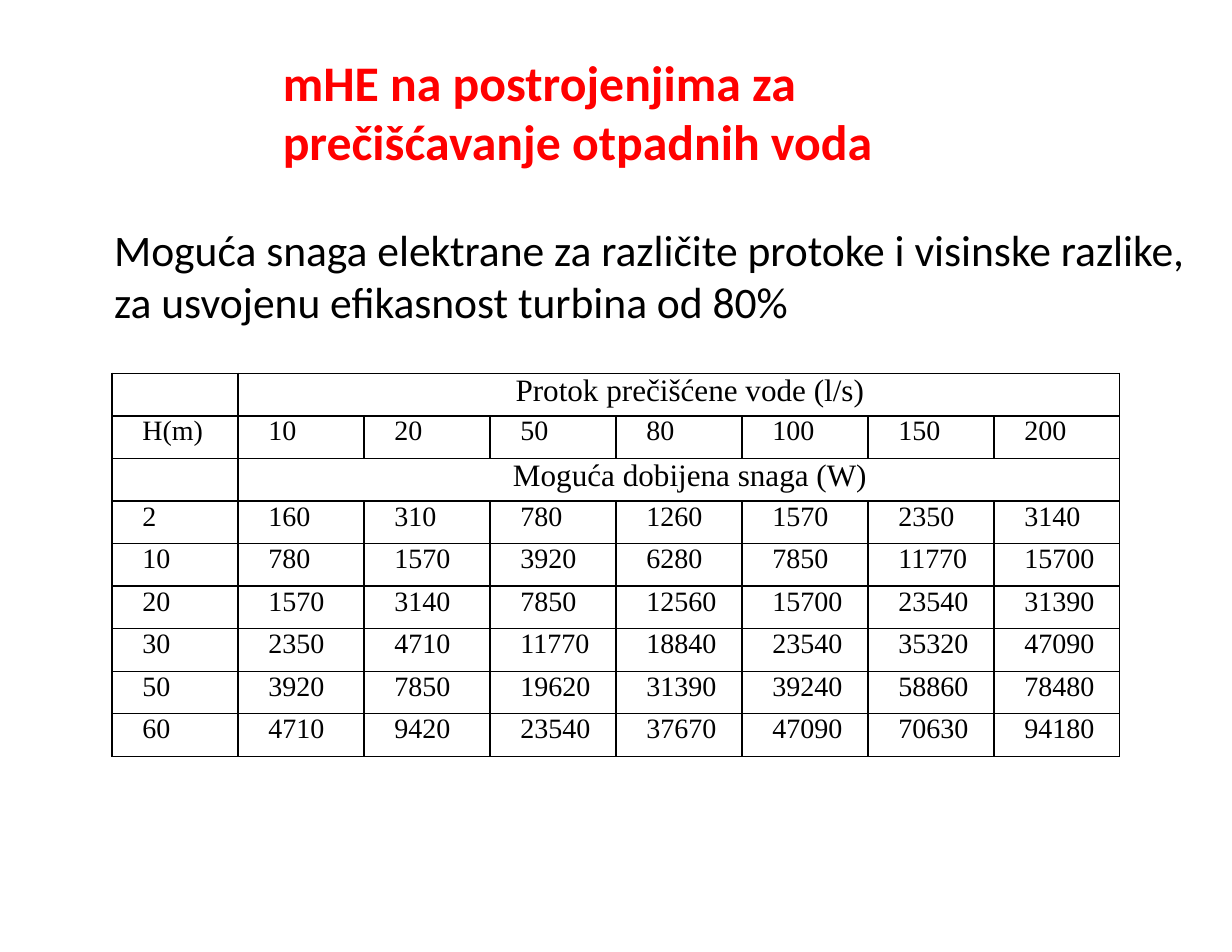
import pptx
import pptx.dml.color
import pptx.enum.text
import pptx.oxml
import pptx.oxml.ns
import pptx.util

Pt = pptx.util.Pt
ALIGN = pptx.enum.text.PP_ALIGN
COLORS = {"title": "FF0000", "text": "000000", "border": "000000"}

TITLE = "mHE na postrojenjima za prečišćavanje otpadnih voda"
SUBTITLE = ("Moguća snaga elektrane za različite protoke i visinske razlike, "
            "za usvojenu efikasnost turbina od 80%")

# A row with two entries has its second one merged across the flow columns
ROWS = [
    ["", "Protok prečišćene vode (l/s)"],
    ["H(m)", 10, 20, 50, 80, 100, 150, 200],
    ["", "Moguća dobijena snaga (W)"],
    [2, 160, 310, 780, 1260, 1570, 2350, 3140],
    [10, 780, 1570, 3920, 6280, 7850, 11770, 15700],
    [20, 1570, 3140, 7850, 12560, 15700, 23540, 31390],
    [30, 2350, 4710, 11770, 18840, 23540, 35320, 47090],
    [50, 3920, 7850, 19620, 31390, 39240, 58860, 78480],
    [60, 4710, 9420, 23540, 37670, 47090, 70630, 94180],
]
COLUMN_COUNT = 8
COLUMN_WIDTH = 81
ROW_HEIGHT = 27.36


def format_font(paragraph, name, size, color, bold=False):
    font = paragraph.font
    font.name = name
    font.size = Pt(size)
    font.bold = bold
    font.color.rgb = pptx.dml.color.RGBColor.from_string(COLORS[color])


def indent(paragraph, left, first_line):
    properties = paragraph._p.get_or_add_pPr()
    properties.set("marL", str(Pt(left)))
    properties.set("indent", str(Pt(first_line)))


def add_title(slide):
    title = slide.shapes.title
    title.left, title.top, title.width, title.height = (
        Pt(124), Pt(18), Pt(546.5), Pt(93))
    frame = title.text_frame
    frame.text = TITLE
    frame.word_wrap = True
    frame.auto_size = pptx.enum.text.MSO_AUTO_SIZE.SHAPE_TO_FIT_TEXT
    frame.vertical_anchor = pptx.enum.text.MSO_ANCHOR.TOP
    frame.margin_left = frame.margin_right = frame.margin_bottom = 0
    frame.margin_top = Pt(15)
    paragraph = frame.paragraphs[0]
    paragraph.alignment = ALIGN.LEFT
    indent(paragraph, 57.8, 0)
    format_font(paragraph, "Calibri", 32, "title", bold=True)


def add_subtitle(slide):
    box = slide.shapes.add_textbox(Pt(66.3), Pt(139.7), Pt(702), Pt(75))
    frame = box.text_frame
    frame.word_wrap = True
    frame.auto_size = pptx.enum.text.MSO_AUTO_SIZE.SHAPE_TO_FIT_TEXT
    frame.text = SUBTITLE
    format_font(frame.paragraphs[0], "Calibri", 28, "text")


def add_borders(cell):
    properties = cell._tc.get_or_add_tcPr()
    for position, side in enumerate(("lnL", "lnR", "lnT", "lnB")):
        line = pptx.oxml.parse_xml(
            f'<a:{side} {pptx.oxml.ns.nsdecls("a")} w="{Pt(1)}"><a:solidFill>'
            f'<a:srgbClr val="{COLORS["border"]}"/></a:solidFill></a:{side}>')
        properties.insert(position, line)


def format_cell(cell, value, heading):
    cell.fill.background()
    add_borders(cell)
    cell.margin_left = cell.margin_right = Pt(5.4)
    cell.margin_top = cell.margin_bottom = 0
    cell.text = str(value)
    paragraph = cell.text_frame.paragraphs[0]
    paragraph.alignment = ALIGN.CENTER if heading else ALIGN.JUSTIFY
    indent(paragraph, 0, 14.2)
    format_font(paragraph, "Times New Roman", 20 if heading else 18, "text")


def add_power_table(slide):
    table = slide.shapes.add_table(
        len(ROWS), COLUMN_COUNT, Pt(72), Pt(240),
        Pt(COLUMN_WIDTH * COLUMN_COUNT), Pt(ROW_HEIGHT * len(ROWS))).table
    table.first_row = table.horz_banding = False
    for column in table.columns:
        column.width = Pt(COLUMN_WIDTH)
    for row_index, values in enumerate(ROWS):
        table.rows[row_index].height = Pt(ROW_HEIGHT)
        merged = len(values) == 2
        if merged:
            table.cell(row_index, 1).merge(
                table.cell(row_index, COLUMN_COUNT - 1))
        for column_index in range(COLUMN_COUNT):
            value = values[column_index] if column_index < len(values) else ""
            format_cell(table.cell(row_index, column_index), value,
                        merged and column_index == 1)


def main():
    presentation = pptx.Presentation()
    presentation.slide_width = Pt(792)
    presentation.slide_height = Pt(612)
    # Title-only layout
    slide = presentation.slides.add_slide(presentation.slide_layouts[5])
    add_title(slide)
    add_power_table(slide)
    add_subtitle(slide)
    presentation.save("out.pptx")


if __name__ == "__main__":
    main()
